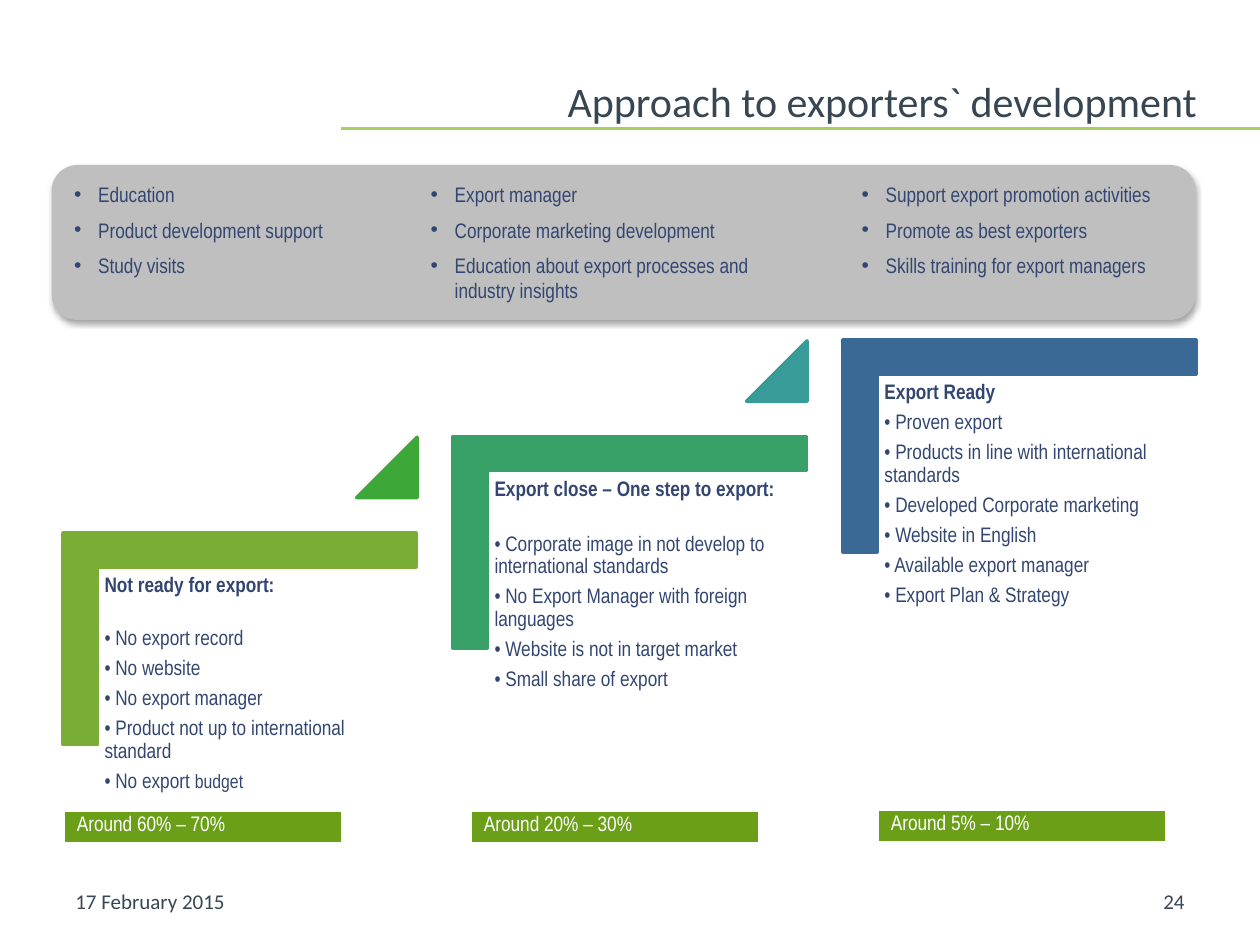
from lxml.etree import SubElement
from pptx import Presentation
from pptx.dml.color import RGBColor
from pptx.enum.shapes import MSO_CONNECTOR, MSO_SHAPE
from pptx.enum.text import MSO_ANCHOR as Anchor, MSO_AUTO_SIZE as AutoSize, PP_ALIGN as Align
from pptx.oxml.ns import qn
from pptx.util import Inches, Pt

COLORS = {
    "title": "374652", "text": "324671", "white": "FFFFFF", "rule": "AACD60",
    "panel": "BFBFBF", "share": "6B9F17", "shadow": "000000",
    "step 1": "79AD36", "step 2": "38A168", "step 3": "3A6995",
    "arrow 1": "3DA737", "arrow 2": "399B98",
}

SUPPORT = [
    (0.49, 2.58, 0.88, ["Education", "Product development support", "Study visits"]),
    (3.32, 2.92, 1.08, ["Export manager", "Corporate marketing development",
                        "Education about export processes and industry insights"]),
    (6.74, 2.75, 0.88, ["Support export promotion activities", "Promote as best exporters",
                        "Skills training for export managers"]),
]

# heading, space after it in points, traits
STEPS = [
    ("Not ready for export:", 17.4,
     ["No export record", "No website", "No export manager",
      "Product not up to international standard", "No export "]),
    ("Export close – One step to export:", 18.5,
     ["Corporate image in not develop to international standards",
      "No Export Manager with foreign languages",
      "Website is not in target market", "Small share of export"]),
    ("Export Ready", 4.2,
     ["Proven export", "Products in line with international standards",
      "Developed Corporate marketing", "Website in English",
      "Available export manager", "Export Plan & Strategy"]),
]

SHARES = [
    (0.51, 6.44, 2.2, "Around 60% – 70%"),
    (3.74, 6.44, 2.28, "Around 20% – 30%"),
    (6.97, 6.43, 2.28, "Around 5% – 10%"),
]


def color(name):
    return RGBColor.from_string(COLORS[name])


def add_span(para, text, size=12, font="Arial Narrow", tint="text", bold=False):
    span = para.add_run()
    span.text = text
    span.font.size = Pt(size)
    span.font.name = font
    span.font.bold = bold
    span.font.color.rgb = color(tint)


def add_bullet(para, indent):
    props = para._p.get_or_add_pPr()
    props.set("marL", str(indent))
    props.set("indent", str(-indent))
    SubElement(props, qn("a:buFont"), typeface="Arial")
    SubElement(props, qn("a:buChar"), char="•")


def next_para(frame, first):
    return frame.paragraphs[0] if first else frame.add_paragraph()


class Page:
    """The current slide and the style of its elements."""

    def __init__(self, deck):
        self.slide = deck.slides.add_slide(deck.slide_layouts[5])
        self.shapes = self.slide.shapes

    def title(self, text):
        box = self.shapes.title
        box.left, box.top, box.width, box.height = map(Inches, (0.5, 0.21, 9, 0.79))
        frame = box.text_frame
        frame.margin_left = frame.margin_right = frame.margin_top = frame.margin_bottom = 0
        frame.vertical_anchor = Anchor.BOTTOM
        frame.auto_size = AutoSize.NONE
        para = frame.paragraphs[0]
        para.alignment = Align.RIGHT
        para.line_spacing = Pt(28)
        add_span(para, text, size=24, font="Calibri", tint="title")

    def rule(self, left, right, y):
        line = self.shapes.add_connector(
            MSO_CONNECTOR.STRAIGHT, Inches(left), Inches(y), Inches(right), Inches(y))
        line.line.color.rgb = color("rule")
        line.line.width = Pt(2)
        SubElement(line._element.spPr, qn("a:effectLst"))

    def text_box(self, left, top, width, height):
        box = self.shapes.add_textbox(*map(Inches, (left, top, width, height)))
        box.text_frame.word_wrap = True
        return box.text_frame

    def footer(self, left, text, align):
        frame = self.text_box(left, 6.95, 2.33, 0.4)
        frame.vertical_anchor = Anchor.MIDDLE
        frame.paragraphs[0].alignment = align
        add_span(frame.paragraphs[0], text, font="Calibri", tint="title")

    def shape(self, kind, left, top, width, height, tint, outlined=True):
        shape = self.shapes.add_shape(kind, *map(Inches, (left, top, width, height)))
        shape.shadow.inherit = False
        shape.fill.solid()
        shape.fill.fore_color.rgb = color(tint)
        if outlined:
            shape.line.color.rgb = color(tint)
            shape.line.width = Pt(2)
        else:
            shape.line.fill.background()
        return shape

    def panel(self, left, top, width, height):
        panel = self.shape(MSO_SHAPE.ROUNDED_RECTANGLE, left, top, width, height,
                           "panel", outlined=False)
        effects = panel._element.spPr.find(qn("a:effectLst"))
        shadow = SubElement(effects, qn("a:outerShdw"), blurRad=str(Pt(3.1)),
                            dist=str(Pt(1.8)), dir="5400000", rotWithShape="0")
        tint = SubElement(shadow, qn("a:srgbClr"), val=COLORS["shadow"])
        SubElement(tint, qn("a:alpha"), val="35000")

    def bullet_list(self, left, width, height, items):
        frame = self.text_box(left, 1.39, width, height)
        frame.auto_size = AutoSize.SHAPE_TO_FIT_TEXT
        for index, item in enumerate(items):
            para = next_para(frame, index == 0)
            add_bullet(para, Inches(0.19))
            if index:
                para.space_before = Pt(6)
            add_span(para, item)

    def step(self, left, top, tint, heading, gap, traits):
        """Draw a stair corner with its text; left and top are those of the text."""
        corner = self.shape(MSO_SHAPE.CORNER, left + 0.28, top - 0.84, 1.68, 2.8, tint)
        corner.rotation = 90
        corner.adjustments[0] = corner.adjustments[1] = 0.161
        frame = self.text_box(left, top, 2.53, 2.22)
        frame.margin_left = frame.margin_right = Inches(0.05)
        for index, text in enumerate([heading] + [f"• {trait}" for trait in traits]):
            para = next_para(frame, index == 0)
            para.line_spacing = 0.9
            para.space_after = Pt(4.2 if index else gap)
            add_span(para, text, bold=index == 0)
        return para

    def arrow(self, left, top, tint):
        triangle = self.shape(MSO_SHAPE.ISOSCELES_TRIANGLE, left, top, 0.48, 0.48, tint)
        triangle.adjustments[0] = 1

    def share(self, left, top, width, text):
        table = self.shapes.add_table(
            1, 1, *map(Inches, (left, top, width, 0.25))).table
        cell = table.cell(0, 0)
        cell.fill.solid()
        cell.fill.fore_color.rgb = color("share")
        cell.vertical_anchor = Anchor.MIDDLE
        cell.margin_top, cell.margin_bottom = Inches(0.01), Inches(0.03)
        add_span(cell.text_frame.paragraphs[0], text, tint="white")


def main():
    deck = Presentation()
    deck.slide_width, deck.slide_height = Inches(10), Inches(7.5)
    page = Page(deck)
    page.rule(2.71, 10, 1.02)
    page.title("Approach to exporters` development")
    page.footer(0.5, "17 February 2015", Align.LEFT)
    page.footer(7.17, "24", Align.RIGHT)

    for index, (heading, gap, traits) in enumerate(STEPS):
        left, top = 0.78 + 3.095 * index, 4.51 - 0.765 * index
        last = page.step(left, top, f"step {index + 1}", heading, gap, traits)
        if index == 0:
            add_span(last, "budget", size=11)
        if index < len(STEPS) - 1:
            page.arrow(left + 2.05, top - 1.04, f"arrow {index + 1}")

    for share in SHARES:
        page.share(*share)
    page.panel(0.41, 1.31, 9.08, 1.23)
    for support in SUPPORT:
        page.bullet_list(*support)
    deck.save("out.pptx")


if __name__ == "__main__":
    main()
